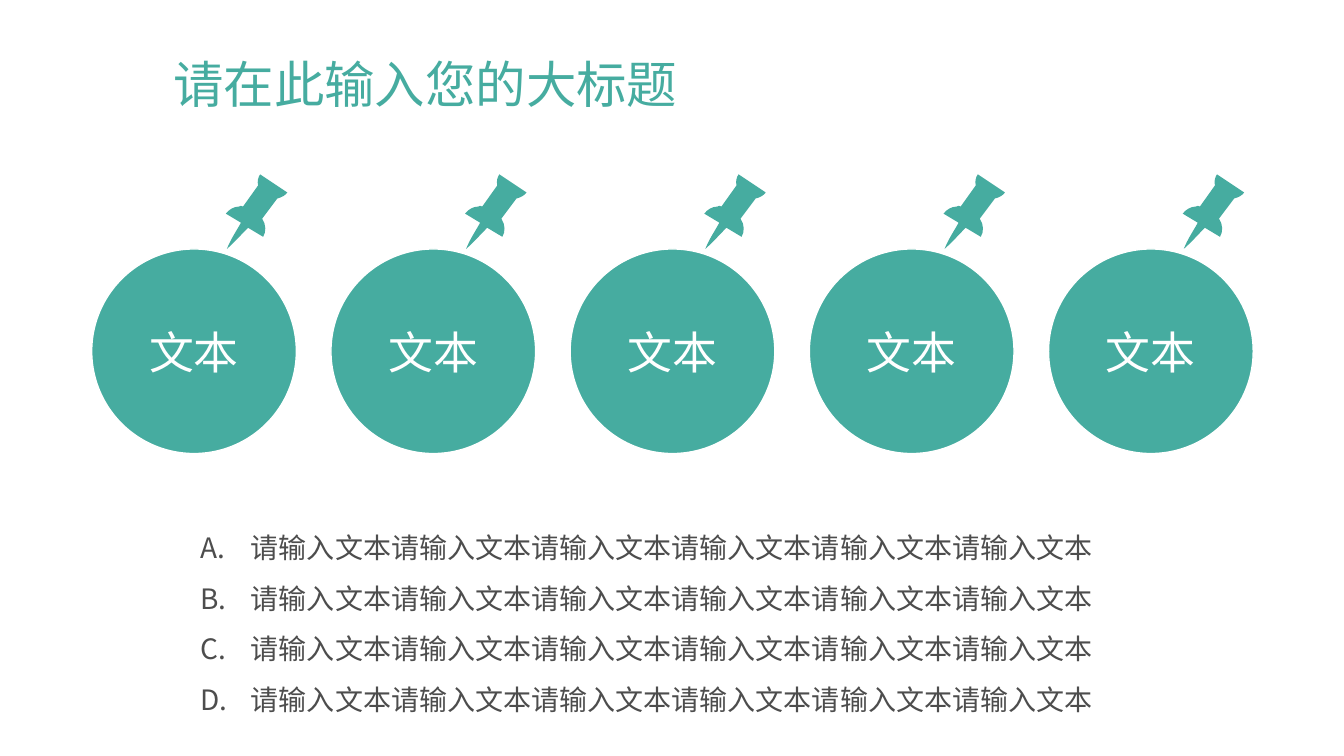
from math import cos, radians, sin

from lxml.etree import SubElement
from pptx import Presentation
from pptx.dml.color import RGBColor
from pptx.enum.shapes import MSO_SHAPE as Shape
from pptx.enum.text import MSO_ANCHOR as Anchor, PP_ALIGN as Align
from pptx.oxml.ns import qn
from pptx.util import Inches, Pt

TEAL = RGBColor(0x46, 0xAC, 0xA0)
GRAY = RGBColor(0x4D, 0x4D, 0x4D)
WHITE = RGBColor(0xFF, 0xFF, 0xFF)
FONT = "Noto Sans CJK SC"

CIRCLE_COUNT = 5
CIRCLE_SIZE = 2.03
PIN_TILT = -11.1
PIN_START = (0.05, -0.35)
PIN_SEGMENTS = [
    [(0.32, -0.17)],
    [(0.30, -0.14), (0.26, -0.12), (0.22, -0.11)],
    [(0.07, 0.09)],
    [(0.11, 0.15), (0.11, 0.22), (0.08, 0.27)],
    [(-0.07, 0.18)],
    [(-0.14, 0.25), (-0.20, 0.32), (-0.28, 0.39)],
    [(-0.24, 0.29), (-0.19, 0.22), (-0.14, 0.13)],
    [(-0.29, 0.04)],
    [(-0.26, 0), (-0.21, -0.03), (-0.16, -0.03)],
    [(-0.15, -0.04), (-0.13, -0.04), (-0.12, -0.03)],
    [(0.03, -0.24)],
    [(0.02, -0.28), (0.03, -0.32), PIN_START],
]


def add_run(p, text, size, color):
    """Add one run with the slide font to a paragraph."""
    r = p.add_run()
    r.text = text
    r.font.size = Pt(size)
    r.font.name = FONT
    r.font.color.rgb = color
    SubElement(r.font._element, qn("a:ea"), typeface=FONT)


def add_text_frame(s, left, top, width, height):
    """Add a wrapping text box and return its text frame."""
    tf = s.shapes.add_textbox(Inches(left), Inches(top), Inches(width), Inches(height)).text_frame
    tf.word_wrap = True
    return tf


def add_title(s, left, top, width, height, text):
    """Add the slide title, centred vertically in its box."""
    tf = add_text_frame(s, left, top, width, height)
    tf.vertical_anchor = Anchor.MIDDLE
    p = tf.paragraphs[0]
    p.line_spacing = 0.9
    add_run(p, text, 36, TEAL)


def curve_segments(sp, segments):
    """Turn each three-point segment of a freeform into a cubic curve."""
    lines = iter(list(sp._element.iter(qn("a:lnTo"))))
    for segment in segments:
        first, *others = [next(lines) for _ in segment]
        if others:
            first.tag = qn("a:cubicBezTo")
        for line in others:
            first.append(line[0])
            line.getparent().remove(line)


def add_pin(s, center_x, center_y):
    """Add a tilted push pin around a centre."""
    turn = radians(-PIN_TILT)
    outline = [PIN_START] + [point for segment in PIN_SEGMENTS for point in segment]
    points = [(Inches(center_x + x * cos(turn) - y * sin(turn)),
               Inches(center_y + x * sin(turn) + y * cos(turn))) for x, y in outline]
    builder = s.shapes.build_freeform(*points[0])
    builder.add_line_segments(points[1:], close=True)
    sp = builder.convert_to_shape()
    curve_segments(sp, PIN_SEGMENTS)
    sp.rotation = PIN_TILT
    sp.shadow.inherit = False
    sp.fill.solid()
    sp.fill.fore_color.rgb = TEAL
    sp.line.fill.background()


def add_pinned_circle(s, left, top, text):
    """Add a labelled circle with a pin at its upper right."""
    size = Inches(CIRCLE_SIZE)
    sp = s.shapes.add_shape(Shape.OVAL, Inches(left), Inches(top), size, size)
    sp.shadow.inherit = False
    sp.fill.solid()
    sp.fill.fore_color.rgb = TEAL
    sp.line.color.rgb = WHITE
    sp.line.width = Pt(1)
    tf = sp.text_frame
    tf.vertical_anchor = Anchor.MIDDLE
    p = tf.paragraphs[0]
    p.alignment = Align.CENTER
    add_run(p, text, 32, WHITE)
    add_pin(s, left + 1.62, top - 0.39)


def add_circle_row(s, left, top, width, text):
    """Spread the pinned circles evenly across a width."""
    pitch = (width - CIRCLE_SIZE) / (CIRCLE_COUNT - 1)
    for i in range(CIRCLE_COUNT):
        add_pinned_circle(s, left + i * pitch, top, text)


def add_lettered_list(s, left, top, width, height, items):
    """Add a list lettered A., B., C. with a hanging indent."""
    tf = add_text_frame(s, left, top, width, height)
    for i, item in enumerate(items):
        p = tf.add_paragraph() if i else tf.paragraphs[0]
        p.line_spacing = 1.5
        pPr = p._p.get_or_add_pPr()
        pPr.set("marL", str(Inches(0.5)))
        pPr.set("indent", str(Inches(-0.5)))
        SubElement(pPr, qn("a:buFont"), typeface=FONT)
        SubElement(pPr, qn("a:buAutoNum"), type="alphaUcPeriod")
        add_run(p, item, 20, GRAY)


def main():
    """Build the slide and save it."""
    prs = Presentation()
    prs.slide_width, prs.slide_height = Inches(13.33), Inches(7.5)
    s = prs.slides.add_slide(prs.slide_layouts[6])
    add_title(s, 1.62, 0.4, 10.88, 0.93, "请在此输入您的大标题")
    add_circle_row(s, 0.91, 2.47, 11.52, "文本")
    add_lettered_list(s, 1.89, 5.05, 9.55, 2.31, ["请输入文本" * 6] * 4)
    prs.save("out.pptx")


if __name__ == "__main__":
    main()
